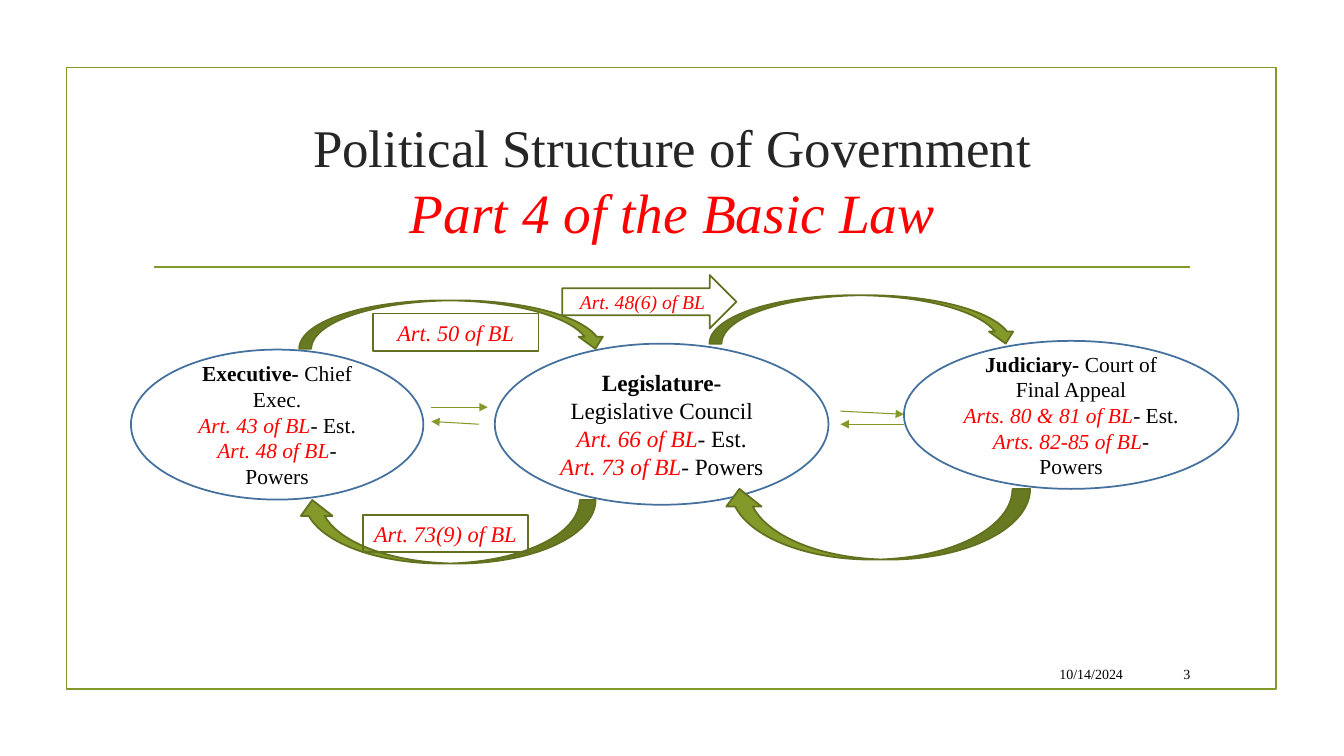
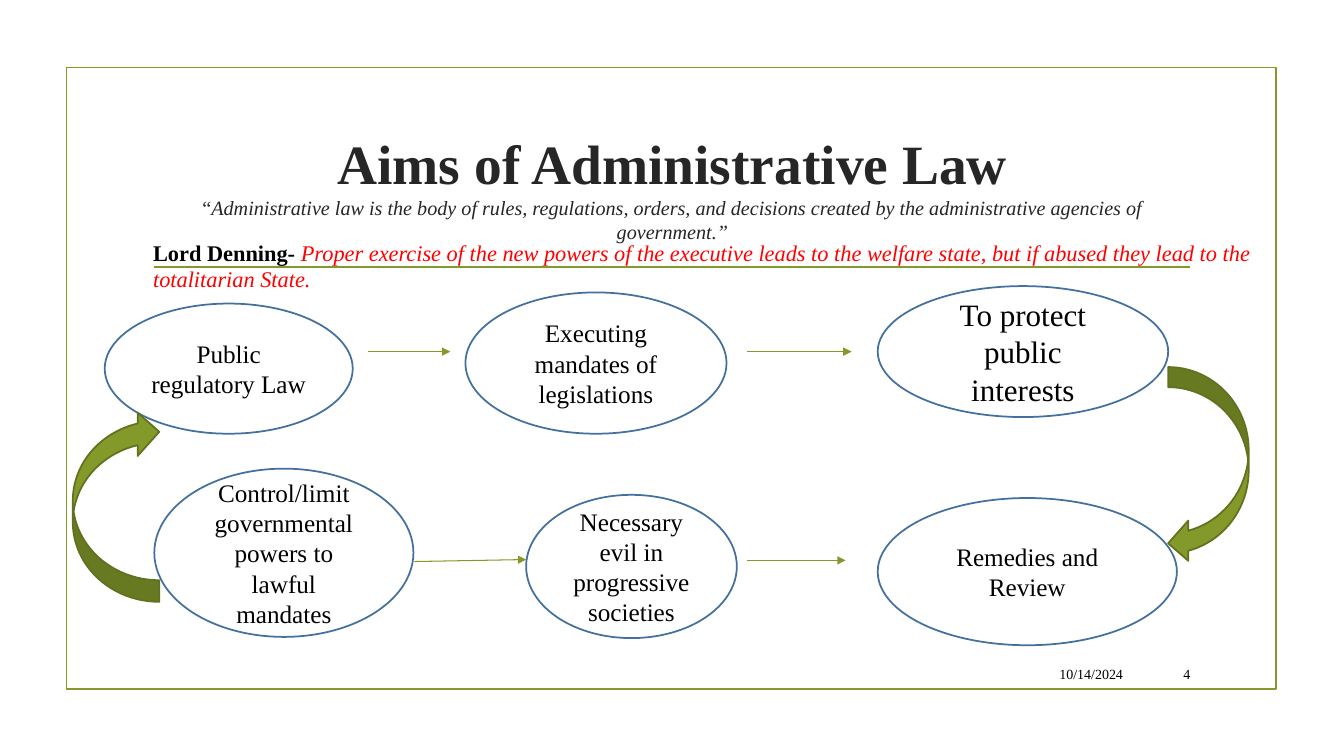
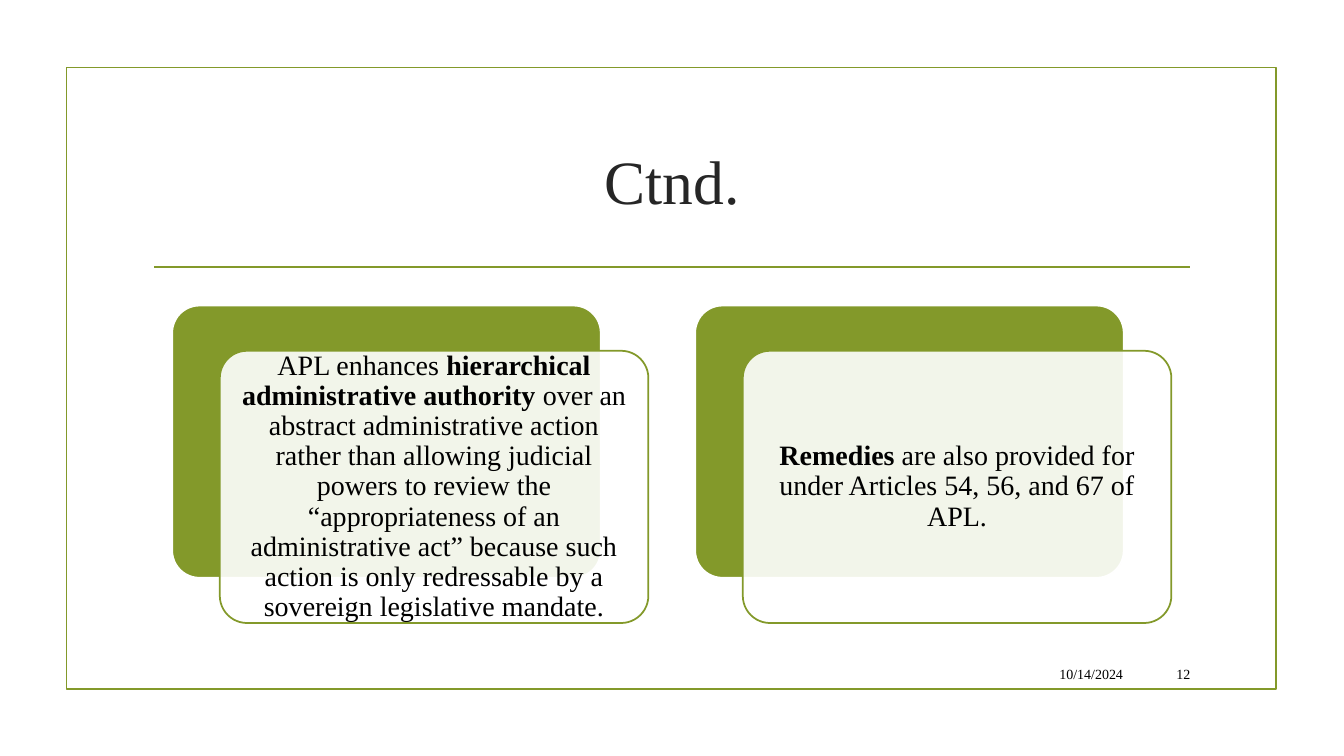
from pptx import Presentation
from pptx.dml.color import RGBColor
from pptx.enum.shapes import MSO_CONNECTOR, MSO_SHAPE
from pptx.enum.text import MSO_ANCHOR, MSO_AUTO_SIZE, PP_ALIGN
from pptx.oxml.ns import qn
from pptx.util import Cm, Pt
from lxml import etree

GREEN = RGBColor(0x83, 0x99, 0x2A)
DARK_GREEN = RGBColor(0x61, 0x71, 0x1F)
BLUE = RGBColor(0x44, 0x70, 0x9D)
RED = RGBColor(0xFF, 0x00, 0x00)
INK = RGBColor(0x26, 0x26, 0x26)
BLACK = RGBColor(0x00, 0x00, 0x00)
WHITE = RGBColor(0xFF, 0xFF, 0xFF)

RECTANGLE, OVAL = MSO_SHAPE.RECTANGLE, MSO_SHAPE.OVAL
ROUNDED = MSO_SHAPE.ROUNDED_RECTANGLE
RIGHT_ARROW = MSO_SHAPE.RIGHT_ARROW
CURVED_DOWN = MSO_SHAPE.CURVED_DOWN_ARROW
CURVED_LEFT = MSO_SHAPE.CURVED_LEFT_ARROW
STRAIGHT = MSO_CONNECTOR.STRAIGHT
LEFT, CENTER, RIGHT = PP_ALIGN.LEFT, PP_ALIGN.CENTER, PP_ALIGN.RIGHT
TOP, MIDDLE = MSO_ANCHOR.TOP, MSO_ANCHOR.MIDDLE

FONT = "Times New Roman"
DATE = "10/14/2024"
TITLE_BOX = (3.61, 2.72, 26.67, 3.63)


def plain(text, **look):
    return text, look


def bold(text, **look):
    return text, {"bold": True, **look}


def cite(text, **look):
    return text, {"color": RED, "italic": True, **look}


class Deck:
    """Holds the style of the deck and the page being drawn."""

    def __init__(self):
        self.deck = Presentation()
        self.deck.slide_width, self.deck.slide_height = Cm(33.87), Cm(19.05)
        self.page = None

    def new_page(self, number, title, title_size, box=TITLE_BOX, anchor=MIDDLE):
        """Add a page with frame, rule, title, date and number."""
        self.page = self.deck.slides.add_slide(self.deck.slide_layouts[5])
        self.shape(RECTANGLE, (1.68, 1.7, 30.48, 15.67), line=GREEN)
        self.line(3.89, 6.73, 30, 6.73, width=1.25)

        heading = self.page.shapes.title
        heading.left, heading.top, heading.width, heading.height = map(Cm, box)
        self.set_text(heading, title, title_size, color=INK, anchor=anchor)

        self.text((24.1, 16.59, 4.45, 0.79), [[plain(DATE)]], 10, RIGHT, MIDDLE)
        self.text((28.75, 16.59, 1.5, 0.79), [[plain(number)]], 10, RIGHT, MIDDLE)

    def set_text(self, shape, paragraphs, size, color=BLACK, align=CENTER,
                 anchor=MIDDLE, wrap=True, spacing=None):
        """Fill a shape with paragraphs, each a list of spans."""
        frame = shape.text_frame
        frame.word_wrap, frame.auto_size = wrap, MSO_AUTO_SIZE.NONE
        frame.vertical_anchor = anchor
        for index, spans in enumerate(paragraphs):
            para = frame.add_paragraph() if index else frame.paragraphs[0]
            para.alignment = align
            if spacing:
                para.line_spacing = spacing
            para.font.name, para.font.size = FONT, Pt(size)
            para.font.color.rgb = color
            for text, look in spans:
                span = para.add_run()
                span.text = text
                if "size" in look:
                    span.font.size = Pt(look["size"])
                if "color" in look:
                    span.font.color.rgb = look["color"]
                span.font.bold = look.get("bold")
                span.font.italic = look.get("italic")

    def text(self, box, paragraphs, size, align=LEFT, anchor=TOP):
        self.set_text(self.page.shapes.add_textbox(*map(Cm, box)), paragraphs,
                      size, align=align, anchor=anchor)

    def shape(self, kind, box, fill=None, line=DARK_GREEN, rotation=0):
        shape = self.page.shapes.add_shape(kind, *map(Cm, box))
        shape.shadow.inherit = False
        shape.rotation = rotation
        if fill is None:
            shape.fill.background()
        else:
            shape.fill.solid()
            shape.fill.fore_color.rgb = fill
        shape.line.color.rgb, shape.line.width = line, Pt(1.25)
        return shape

    def oval(self, box, paragraphs, size=18):
        self.set_text(self.shape(OVAL, box, WHITE, BLUE), paragraphs, size)

    def label(self, kind, box, text, size):
        self.set_text(self.shape(kind, box), [[cite(text)]], size, wrap=False)

    def line(self, x1, y1, x2, y2, width=0.75, arrow=False):
        line = self.page.shapes.add_connector(STRAIGHT, *map(Cm, (x1, y1, x2, y2)))
        line.line.color.rgb, line.line.width = GREEN, Pt(width)
        properties = line.element.spPr
        if arrow:
            outline = properties.find(qn("a:ln"))
            etree.SubElement(outline, qn("a:tailEnd"), type="triangle")
        etree.SubElement(properties, qn("a:effectLst"))

    def card(self, left, top, spans):
        """Draw a green plate with a translucent text panel over it."""
        width, height = 10.8, 6.86
        plate = self.shape(ROUNDED, (left, top, width, height), GREEN, WHITE)
        panel = self.shape(ROUNDED, (left + 1.2, top + 1.14, width, height),
                           WHITE, GREEN)
        for shape in (plate, panel):
            shape.adjustments[0] = 0.1
        tint = panel.element.spPr.find(qn("a:solidFill"))[0]
        etree.SubElement(tint, qn("a:alpha"), val="90000")
        frame = panel.text_frame
        frame.margin_left = frame.margin_right = Cm(0.2)
        frame.margin_top = frame.margin_bottom = Cm(0.2)
        self.set_text(panel, [spans], 20, spacing=0.9)


def political_structure(deck):
    deck.new_page("3", [[plain("Political Structure of Government")],
                        [cite("Part 4 of the Basic Law", size=39.6)]], 37.8)

    # Branches of government
    branches = [
        ((3.3, 8.81, 7.37, 3.78), 15.3, "Executive-", " Chief Exec.",
         "Art. 43 of BL", "Art. 48 of BL"),
        ((22.78, 8.59, 8.43, 3.73), 15.3, "Judiciary-", " Court of Final Appeal",
         "Arts. 80 & 81 of BL", "Arts. 82-85 of BL"),
        ((12.47, 8.66, 8.41, 4.06), 16.6, "Legislature-", " Legislative Council",
         "Art. 66 of BL", "Art. 73 of BL"),
    ]
    for box, size, branch, body, established, powers in branches:
        deck.oval(box, [[bold(branch), plain(body)],
                        [cite(established), plain("- Est.")],
                        [cite(powers), plain("- Powers")]], size)

    # Curved arrows above and below
    for box, rotation in [((7.54, 7.57, 7.77, 1.22), 0),
                          ((17.88, 7.44, 7.77, 1.22), 0),
                          ((18.19, 12.32, 7.77, 1.78), 180),
                          ((7.47, 12.6, 7.54, 1.6), 180)]:
        deck.shape(CURVED_DOWN, box, GREEN, rotation=rotation)

    # Straight arrows between neighbours
    for ends in [(10.87, 10.26, 12.29, 10.26), (21.18, 10.36, 22.78, 10.44),
                 (12.07, 10.69, 10.87, 10.62), (22.78, 10.69, 21.18, 10.69)]:
        deck.line(*ends, arrow=True)

    # Article labels
    deck.label(RECTANGLE, (9.14, 12.98, 4.17, 0.94), "Art. 73(9) of BL", 16)
    deck.label(RECTANGLE, (9.4, 7.9, 4.17, 0.94), "Art. 50 of BL", 16)
    deck.label(RIGHT_ARROW, (14.17, 6.93, 4.39, 1.35), "Art. 48(6) of BL", 14)


def aims(deck):
    quote = ("Administrative law is the body of rules, regulations, orders, and "
             "decisions created by the administrative agencies of government.”")
    deck.new_page("4", [[bold("Aims of Administrative Law")],
                        [plain("“", size=14.4),
                         plain(quote, size=14.4, italic=True)]],
                  39.6, (3.61, 3.07, 26.67, 2.77), TOP)
    frame = deck.page.shapes.title.text_frame
    frame.margin_top, frame.margin_bottom = Cm(0.18), Cm(0)

    # Aims
    for box, text, size in [
        ((2.64, 7.65, 6.25, 3.28), "Public regulatory Law", 18),
        ((11.73, 7.37, 6.58, 3.56), "Executing mandates of legislations", 18),
        ((22.12, 7.21, 7.32, 3.3), "To protect public interests", 22.2),
        ((13.26, 12.47, 5.31, 3.61), "Necessary evil in progressive societies", 18),
        ((22.12, 12.55, 7.54, 3.71), "Remedies and Review", 18),
        ((3.89, 11.81, 6.53, 4.24),
         "Control/limit governmental powers to lawful mandates", 18),
    ]:
        deck.oval(box, [[plain(text)]], size)

    # Arrows along the rows and around the ends
    for ends in [(9.27, 8.86, 11.35, 8.86), (18.82, 14.12, 21.31, 14.12),
                 (18.82, 8.86, 21.46, 8.86), (10.44, 14.15, 13.26, 14.1)]:
        deck.line(*ends, arrow=True)
    deck.shape(CURVED_LEFT, (29.44, 9.25, 2.03, 4.95), GREEN)
    deck.shape(CURVED_DOWN, (0.51, 11.66, 4.83, 2.18), GREEN, rotation=270)

    # Quotation across the rule
    deck.text((3.61, 5.89, 28.68, 0.94),
              [[bold("Lord Denning- "),
                cite("Proper exercise of the new powers of the executive leads to "
                     "the welfare state, but if abused they lead to the "
                     "totalitarian State.")]], 16)


def continued(deck):
    deck.new_page("12", [[plain("Ctnd.")]], 44)
    cards = [
        [plain("APL enhances "), bold("hierarchical administrative authority "),
         plain("over an abstract administrative action rather than allowing "
               "judicial powers to review the “appropriateness of an "
               "administrative act” because such action is only redressable by "
               "a sovereign legislative mandate.")],
        [bold("Remedies"),
         plain(" are also provided for under Articles 54, 56, and 67 of APL.")],
    ]
    for column, spans in enumerate(cards):
        deck.card(4.34 + column * 13.18, 7.7, spans)


def main():
    deck = Deck()
    political_structure(deck)
    aims(deck)
    continued(deck)
    deck.deck.save("out.pptx")


if __name__ == "__main__":
    main()
